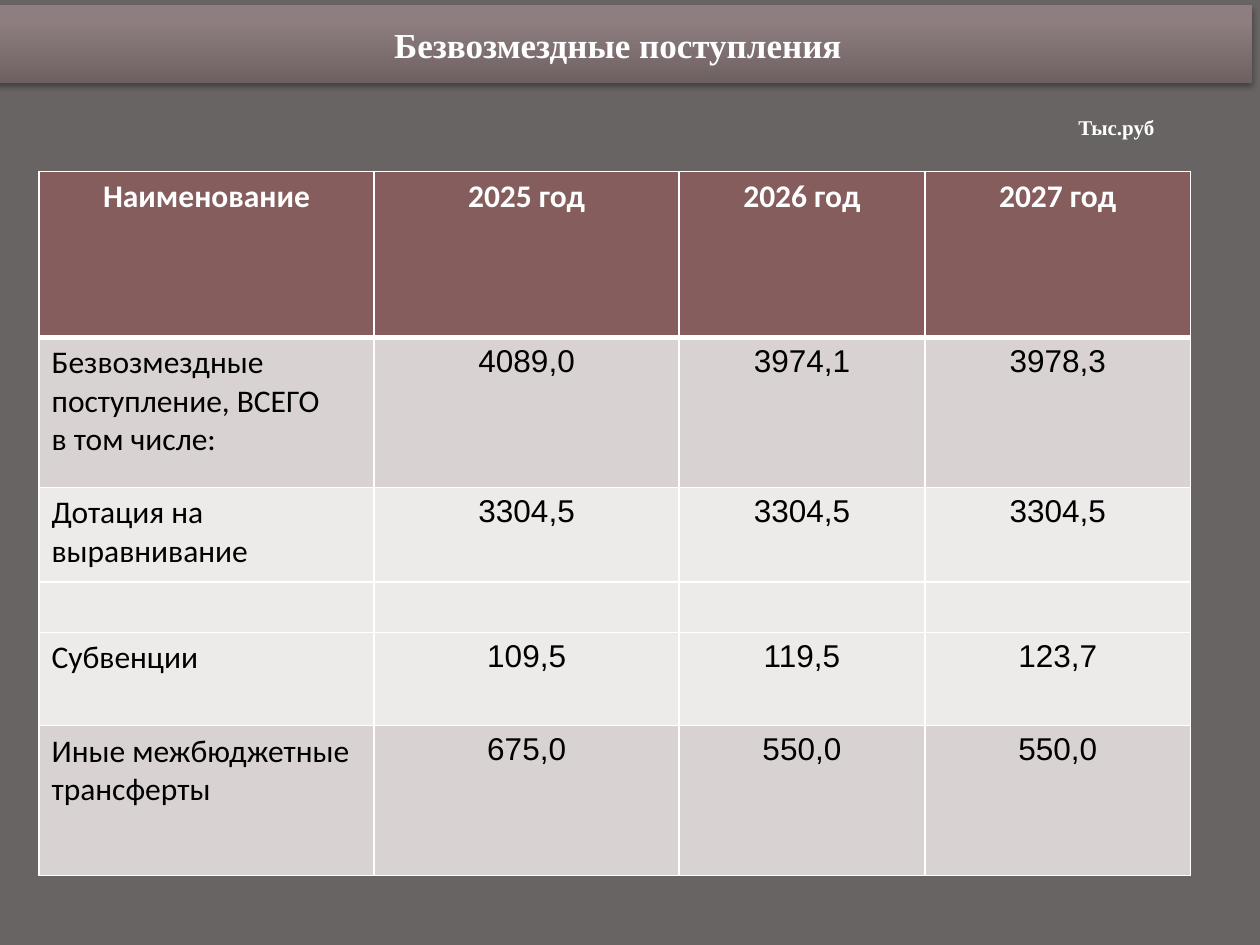
from copy import deepcopy
from dataclasses import dataclass

from lxml import etree
from pptx import Presentation
from pptx.dml.color import RGBColor
from pptx.enum.shapes import MSO_SHAPE
from pptx.enum.text import MSO_ANCHOR, PP_ALIGN
from pptx.oxml.ns import qn
from pptx.util import Inches, Pt

RECTANGLE = MSO_SHAPE.RECTANGLE
MIDDLE = MSO_ANCHOR.MIDDLE
LEFT, CENTER = PP_ALIGN.LEFT, PP_ALIGN.CENTER


@dataclass(frozen=True)
class Theme:
    background: str = "696464"
    light: str = "FFFFFF"
    dark: str = "000000"
    header: str = "855D5D"
    band: str = "D9D2D2"
    pale_band: str = "EDEAEA"
    banner_stops: tuple = ((0, "6E6162"), (0.8, "8E7E7F"), (1, "8F7E80"))
    title_font: str = "Times New Roman"
    label_font: str = "Calibri"
    number_font: str = "Arial"
    title_size: int = 20
    unit_size: int = 12
    table_size: int = 18
    border: int = 1
    header_border: int = 3


class SlideBuilder:
    def __init__(self, slide, theme):
        self.slide = slide
        self.theme = theme
        background = slide.background.fill
        background.solid()
        background.fore_color.rgb = RGBColor.from_string(theme.background)

    def set_text(self, frame, text, font, size, color, bold=False, align=CENTER):
        frame.text = text
        for paragraph in frame.paragraphs:
            paragraph.alignment = align
            for run in paragraph.runs:
                run.font.name = font
                run.font.size = Pt(size)
                run.font.bold = bold
                run.font.color.rgb = RGBColor.from_string(color)

    def banner(self, text, left, top, width, height):
        theme = self.theme
        bar = self.slide.shapes.add_shape(
            RECTANGLE, Inches(left), Inches(top), Inches(width), Inches(height))
        bar.line.fill.background()
        bar.fill.gradient()
        bar.fill.gradient_angle = 90
        stop_list = bar._element.spPr.find(".//" + qn("a:gsLst"))
        stop_list.append(deepcopy(stop_list[0]))
        for stop, (position, color) in zip(bar.fill.gradient_stops, theme.banner_stops):
            stop.position = position
            stop.color.rgb = RGBColor.from_string(color)
        self.drop_shadow(bar)
        bar.text_frame.word_wrap = True
        bar.text_frame.vertical_anchor = MIDDLE
        self.set_text(bar.text_frame, text, theme.title_font, theme.title_size,
                      theme.light, bold=True)

    def drop_shadow(self, shape):
        shape.shadow.inherit = False
        effects = shape._element.spPr.find(qn("a:effectLst"))
        shadow = etree.SubElement(
            effects, qn("a:outerShdw"), blurRad=str(Pt(3.1)), dist=str(Pt(1.8)),
            dir="5400000", rotWithShape="0")
        color = etree.SubElement(shadow, qn("a:srgbClr"), val=self.theme.dark)
        etree.SubElement(color, qn("a:alpha"), val="35000")

    def unit_note(self, text, left, top, width, height):
        theme = self.theme
        note = self.slide.shapes.add_textbox(
            Inches(left), Inches(top), Inches(width), Inches(height))
        note.text_frame.word_wrap = True
        self.set_text(note.text_frame, text, theme.title_font, theme.unit_size,
                      theme.light, bold=True)

    def table(self, rows, fills, left, top, widths, heights):
        theme = self.theme
        table = self.slide.shapes.add_table(
            len(rows), len(widths), Inches(left), Inches(top),
            Inches(sum(widths)), Inches(sum(heights))).table
        for column, width in zip(table.columns, widths):
            column.width = Inches(width)
        for row, height in zip(table.rows, heights):
            row.height = Inches(height)
        for r, values in enumerate(rows):
            is_header = r == 0
            for c, value in enumerate(values):
                cell = table.cell(r, c)
                cell.fill.solid()
                cell.fill.fore_color.rgb = RGBColor.from_string(fills[r])
                self.cell_borders(
                    cell,
                    top=theme.header_border if r == 1 else theme.border,
                    bottom=theme.header_border if is_header else theme.border)
                is_label = is_header or c == 0
                self.set_text(
                    cell.text_frame, value,
                    theme.label_font if is_label else theme.number_font,
                    theme.table_size, theme.light if is_header else theme.dark,
                    bold=is_header, align=LEFT if c == 0 and not is_header else CENTER)

    def cell_borders(self, cell, top, bottom):
        properties = cell._tc.get_or_add_tcPr()
        side = self.theme.border
        sides = (("a:lnL", side), ("a:lnR", side), ("a:lnT", top), ("a:lnB", bottom))
        for index, (tag, width) in enumerate(sides):
            line = etree.Element(qn(tag), w=str(Pt(width)))
            fill = etree.SubElement(line, qn("a:solidFill"))
            etree.SubElement(fill, qn("a:srgbClr"), val=self.theme.light)
            properties.insert(index, line)


def main():
    theme = Theme()
    presentation = Presentation()
    presentation.slide_width = Inches(10)
    presentation.slide_height = Inches(7.5)
    blank = presentation.slide_layouts[6]
    builder = SlideBuilder(presentation.slides.add_slide(blank), theme)

    builder.banner("Безвозмездные поступления ", -0.06, 0.04, 10, 0.62)
    builder.unit_note("Тыс.руб", 8.12, 0.86, 1.48, 0.3)

    receipts = [
        ("Наименование", "2025 год", "2026 год", "2027 год"),
        ("Безвозмездные поступление, ВСЕГО\nв том числе:", "4089,0", "3974,1", "3978,3"),
        ("Дотация на выравнивание", "3304,5", "3304,5", "3304,5"),
        ("", "", "", ""),
        ("Субвенции", "109,5", "119,5", "123,7"),
        ("Иные межбюджетные трансферты", "675,0", "550,0", "550,0"),
    ]
    fills = [theme.header, theme.band, *[theme.pale_band] * 3, theme.band]
    builder.table(receipts, fills, 0.31, 1.36,
                  widths=[2.66, 2.42, 1.95, 2.11],
                  heights=[1.32, 1.19, 0.75, 0.4, 0.74, 1.19])

    presentation.save("out.pptx")


if __name__ == "__main__":
    main()
